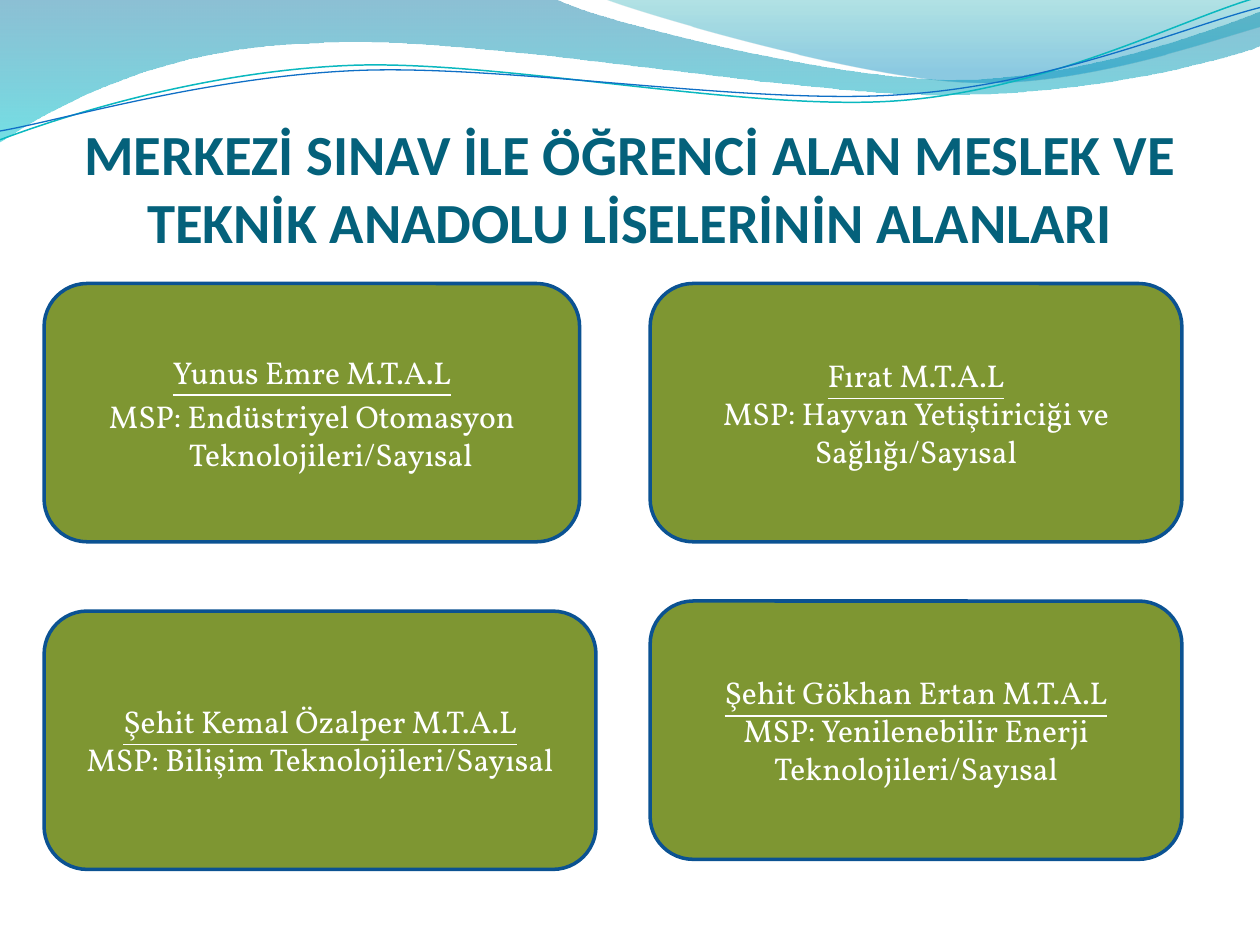
import pptx
import pptx.util
import pptx.dml.color
import pptx.enum.shapes
import pptx.enum.text
import pptx.oxml.ns
import lxml.etree

Inches, Pt = pptx.util.Inches, pptx.util.Pt
RGB = pptx.dml.color.RGBColor
ALIGN, ANCHOR = pptx.enum.text.PP_ALIGN, pptx.enum.text.MSO_ANCHOR
qn = pptx.oxml.ns.qn

TITLE_BLUE = RGB(0x04, 0x61, 0x7B)
GREEN = RGB(0x7E, 0x96, 0x32)
BORDER = RGB(0x0B, 0x52, 0x92)
WHITE = RGB(0xFF, 0xFF, 0xFF)
TEAL_LINE = RGB(0x0A, 0xB8, 0xBF)
BLUE_LINE = RGB(0x0F, 0x6F, 0xC6)
DEEP_BLUE, TURQUOISE = RGB(0x00, 0x74, 0xA1), RGB(0x00, 0xC6, 0xCF)
SEA_GREEN, SKY_BLUE = RGB(0x00, 0xA1, 0xA9), RGB(0x00, 0x8B, 0xBF)

WIDE_WAVE = [
    (0, 0), (4.4, -0.01),
    (4.76, 0.17, 6.64, 0.63, 7.58, 0.63), (8.53, 0.63, 9.58, 0.26, 10, 0.09),
    (10.01, 0.36),
    (9.83, 0.44, 8.7, 0.76, 7.46, 0.75), (6.22, 0.75, 3.82, 0.28, 2.57, 0.34),
    (1.29, 0.36, 0.46, 0.83, -0.01, 1.13),
]
RIGHT_WAVE = [
    (4.79, -0.01),
    (5.09, 0.11, 6.82, 0.62, 7.69, 0.65), (8.56, 0.69, 9.61, 0.32, 10, 0.21),
    (10, 0),
]
TEAL_CURVE = [
    (0, 1.11),
    (0.48, 0.93, 1.58, 0.57, 2.77, 0.52), (3.95, 0.47, 5.93, 0.89, 7.13, 0.8),
    (8.33, 0.71, 9.38, 0.15, 9.98, -0.02),
]
BLUE_CURVE = [
    (0, 1.04),
    (0.47, 0.96, 1.64, 0.61, 2.83, 0.56), (4.03, 0.51, 5.97, 0.84, 7.17, 0.75),
    (8.36, 0.67, 9.41, 0.21, 10, 0.06),
]
SCHOOLS = [
    ((0.35, 2.25, 4.25, 2.05), "Yunus Emre M.T.A.L",
     "MSP: Endüstriyel Otomasyon Teknolojileri/Sayısal", True),
    ((5.16, 2.25, 4.22, 2.05), "Fırat M.T.A.L",
     "MSP: Hayvan Yetiştiriciği ve Sağlığı/Sayısal", False),
    ((0.35, 4.85, 4.38, 2.05), "Şehit Kemal Özalper M.T.A.L",
     "MSP: Bilişim Teknolojileri/Sayısal", False),
    ((5.16, 4.77, 4.22, 2.05), "Şehit Gökhan Ertan M.T.A.L",
     "MSP: Yenilenebilir Enerji Teknolojileri/Sayısal", False),
]


def add_outline(s, box, segments, close):
    """Draw lines and cubic curves relative to the top left of the box."""
    left, top = box[:2]
    points = [(Inches(left + x), Inches(top + y))
              for seg in segments for x, y in zip(seg[::2], seg[1::2])]
    builder = s.shapes.build_freeform(*points[0])
    builder.add_line_segments(points[1:], close=close)
    sp = builder.convert_to_shape()
    sp.shadow.inherit = False
    lines = iter(list(sp._element.spPr.iter(qn("a:lnTo"))))
    for seg in segments[1:]:
        node = next(lines)
        if len(seg) == 6:
            node.tag = qn("a:cubicBezTo")
            for _ in range(2):
                extra = next(lines)
                node.append(extra[0])
                extra.getparent().remove(extra)
    return sp


def add_wave(s, box, segments, stops):
    """Add a wave with a translucent gradient running downwards."""
    sp = add_outline(s, box, segments, True)
    sp.line.fill.background()
    sp.fill.gradient()
    sp.fill.gradient_angle = 270
    for stop, (position, color, _) in zip(sp.fill.gradient_stops, stops):
        stop.position, stop.color.rgb = position, color
    colors = sp._element.spPr.iter(qn("a:srgbClr"))
    for node, (_, _, opacity) in zip(colors, stops):
        lxml.etree.SubElement(node, qn("a:alpha")).set("val", str(opacity * 1000))


def add_header(s, box):
    """Add the waves and thin curves along the top of the slide."""
    add_wave(s, box, WIDE_WAVE, [(0, DEEP_BLUE, 45), (1, TURQUOISE, 55)])
    add_wave(s, box, RIGHT_WAVE, [(0, SEA_GREEN, 30), (0.8, SKY_BLUE, 45)])
    for segments, color, width in ((TEAL_CURVE, TEAL_LINE, 0.85),
                                   (BLUE_CURVE, BLUE_LINE, 0.75)):
        sp = add_outline(s, box, segments, False)
        sp.fill.background()
        sp.line.color.rgb, sp.line.width = color, Pt(width)


def add_text(p, text, color, **font):
    """Fill a centred paragraph with one formatted run."""
    p.alignment = ALIGN.CENTER
    r = p.add_run()
    r.text = text
    r.font.color.rgb = color
    for name, value in font.items():
        setattr(r.font, name, value)


def add_title(s, box, text):
    """Add the bottom-anchored slide title."""
    tf = s.shapes.add_textbox(*map(Inches, box)).text_frame
    layout = {"word_wrap": True, "vertical_anchor": ANCHOR.BOTTOM, "margin_left": 0,
              "margin_right": 0, "margin_top": Inches(0.05), "margin_bottom": 0}
    for name, value in layout.items():
        setattr(tf, name, value)
    add_text(tf.paragraphs[0], text, TITLE_BLUE, name="Calibri", size=Pt(32.4), bold=True)


def add_school(s, box, school, field, hanging):
    """Add a rounded card with a school name and its field."""
    sp = s.shapes.add_shape(pptx.enum.shapes.MSO_SHAPE.ROUNDED_RECTANGLE,
                            *map(Inches, box))
    sp.shadow.inherit = False
    sp.fill.solid()
    sp.fill.fore_color.rgb = GREEN
    sp.line.color.rgb, sp.line.width = BORDER, Pt(2)
    tf = sp.text_frame
    tf.word_wrap, tf.vertical_anchor = True, ANCHOR.MIDDLE
    for p, text, underline in ((tf.paragraphs[0], school, True),
                               (tf.add_paragraph(), field, False)):
        add_text(p, text, WHITE, name="Vollkorn", size=Pt(18), underline=underline)
        if hanging:
            p.space_before = Pt(3.6)
            pPr = p._p.get_or_add_pPr()
            pPr.set("marL", str(Inches(0.3)))
            pPr.set("indent", str(Inches(-0.3)))


def main():
    """Build and save the slide."""
    prs = pptx.Presentation()
    prs.slide_width, prs.slide_height = Inches(10), Inches(7.5)
    s = prs.slides.add_slide(prs.slide_layouts[6])
    add_header(s, (0, 0, 10, 1.14))
    add_title(s, (0.5, 0.77, 9, 1.25),
              "MERKEZİ SINAV İLE ÖĞRENCİ ALAN MESLEK VE "
              "TEKNİK ANADOLU LİSELERİNİN ALANLARI")
    for box, school, field, hanging in SCHOOLS:
        add_school(s, box, school, field, hanging)
    prs.save("out.pptx")


if __name__ == "__main__":
    main()
